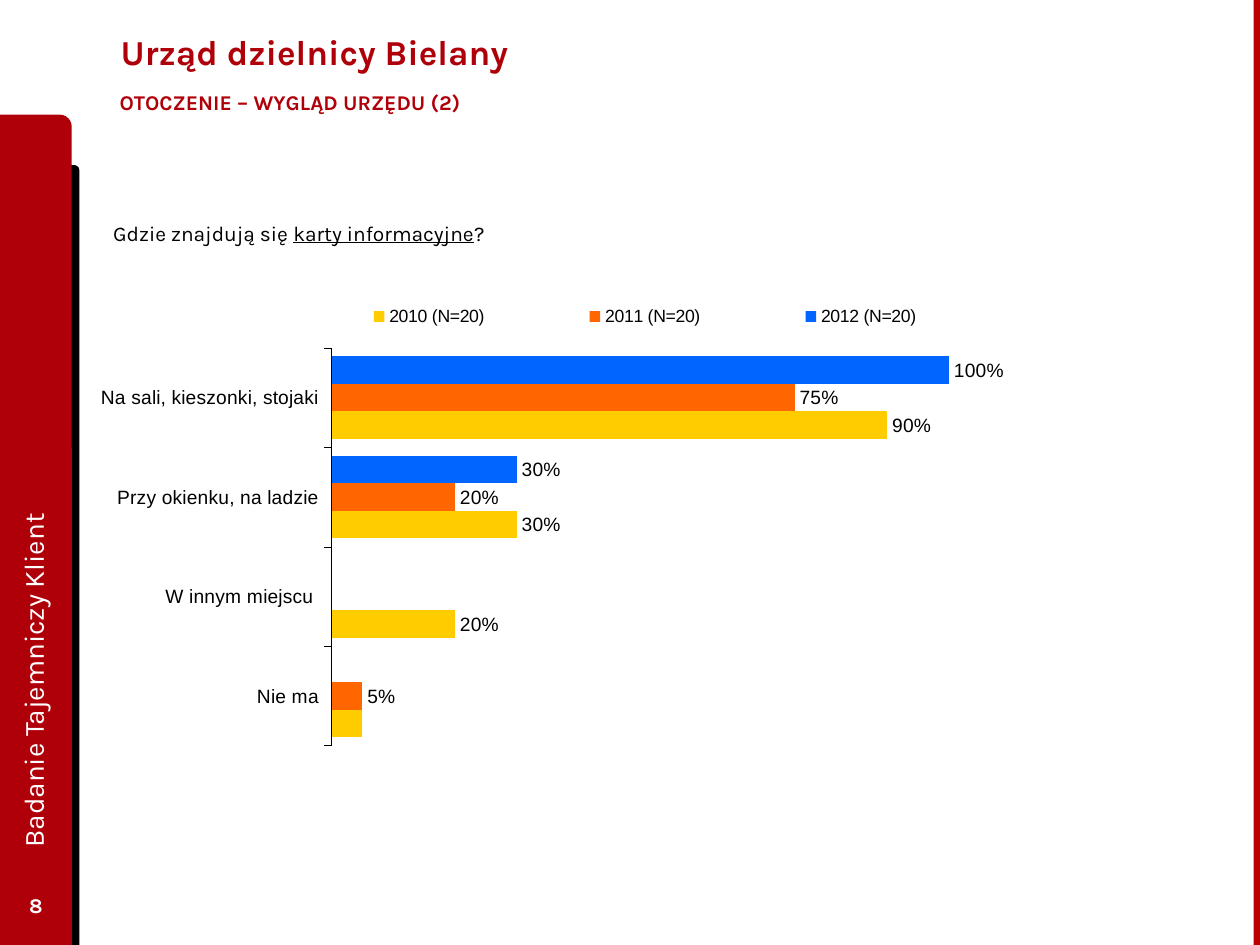
from dataclasses import dataclass

from lxml.etree import SubElement
from pptx import Presentation
from pptx.chart.data import CategoryChartData
from pptx.dml.color import RGBColor
from pptx.enum.chart import (XL_CHART_TYPE, XL_LABEL_POSITION,
                             XL_LEGEND_POSITION, XL_TICK_MARK)
from pptx.enum.shapes import MSO_SHAPE
from pptx.enum.text import MSO_ANCHOR, PP_ALIGN
from pptx.oxml import parse_xml
from pptx.oxml.ns import nsdecls, qn
from pptx.util import Inches, Pt

RED, BLACK, WHITE = "AF000A", "000000", "FFFFFF"


@dataclass
class Box:
    left: float
    top: float
    width: float
    height: float

    def place(self) -> tuple:
        return tuple(map(Inches, (self.left, self.top, self.width, self.height)))


@dataclass
class Panel:
    box: Box
    kind: MSO_SHAPE
    fill: str


@dataclass
class Label:
    box: Box
    runs: list[str]
    size: float
    color: str
    bold: bool = False
    align: PP_ALIGN = PP_ALIGN.LEFT
    anchor: MSO_ANCHOR = MSO_ANCHOR.TOP
    inset: float = 0.1
    wrap: bool = True
    turn: float = 0


@dataclass
class Series:
    name: str
    values: list
    color: str


PANELS = [
    Panel(Box(0.39, 1.31, 0.24, 6.19), MSO_SHAPE.ROUND_1_RECTANGLE, BLACK),
    Panel(Box(0, 0.91, 0.57, 6.59), MSO_SHAPE.ROUND_1_RECTANGLE, RED),
    Panel(Box(9.95, 0, 0.05, 7.5), MSO_SHAPE.RECTANGLE, "BD0000"),
]
MID = MSO_ANCHOR.MIDDLE
LABELS = [
    Label(Box(0.86, 0.05, 7.77, 0.72), ["Urząd dzielnicy Bielany"], 20, RED,
          bold=True, anchor=MID),
    Label(Box(0.75, 0.66, 3.85, 0.33), ["OTOCZENIE – WYGLĄD URZĘDU (2)"], 12, RED,
          bold=True, inset=0.2, wrap=False),
    # Every second run is underlined
    Label(Box(0.8, 1.7, 6.15, 0.3),
          ["Gdzie znajdują się ", "karty informacyjne", "?"], 12, BLACK),
    Label(Box(0, 6.98, 0.57, 0.4), ["8"], 12, WHITE,
          bold=True, align=PP_ALIGN.CENTER, anchor=MID),
    Label(Box(-2.62, 3.69, 5.76, 0.51), ["Badanie Tajemniczy Klient"], 16, WHITE,
          anchor=MID, turn=270),
]
GROUPS = ["Na sali, kieszonki, stojaki", "Przy okienku, na ladzie",
          "W innym miejscu ", "Nie ma"]
SERIES = [
    Series("2012 (N=20)", [1, 0.3, None, None], "0066FF"),
    Series("2011 (N=20)", [0.75, 0.2, None, 0.05], "FF6600"),
    Series("2010 (N=20)", [0.9, 0.3, 0.2, 0.05], "FFCC00"),
]


def paint(fmt, color: str) -> None:
    fmt.solid()
    fmt.fore_color.rgb = RGBColor.from_string(color)


def style(font, size: float, color: str, face: str, bold: bool = False) -> None:
    font.size, font.name, font.bold = Pt(size), face, bold
    font.color.rgb = RGBColor.from_string(color)


def add_panel(slide, item: Panel) -> None:
    shape = slide.shapes.add_shape(item.kind, *item.box.place())
    shape.shadow.inherit = False
    paint(shape.fill, item.fill)
    shape.line.fill.background()


def add_label(slide, item: Label) -> None:
    shape = slide.shapes.add_textbox(*item.box.place())
    shape.rotation = item.turn
    frame = shape.text_frame
    frame.word_wrap = item.wrap
    frame.vertical_anchor = item.anchor
    frame.margin_left = frame.margin_right = Inches(item.inset)
    para = frame.paragraphs[0]
    para.alignment = item.align
    style(para.font, item.size, item.color, "Karla", item.bold)
    for i, text in enumerate(item.runs):
        run = para.add_run()
        run.text = text
        if i % 2:
            run.font.underline = True


def layout(x: float, y: float, w: float, h: float, inner: bool = False):
    """Make a manual layout in fractions of the chart."""
    root = parse_xml(f"<c:layout {nsdecls('c')}><c:manualLayout/></c:layout>")
    parts = [("layoutTarget", "inner")] if inner else []
    parts += [("xMode", "edge"), ("yMode", "edge"),
              ("x", x), ("y", y), ("w", w), ("h", h)]
    for tag, val in parts:
        SubElement(root[0], qn(f"c:{tag}")).set("val", str(val))
    return root


def set_layout(node, new, after: str = "") -> None:
    """Swap in a layout, first in the node or after the named child."""
    old = node.find(qn("c:layout"))
    if old is not None:
        node.remove(old)
    if after:
        node.find(qn(after)).addnext(new)
    else:
        node.insert(0, new)


def hide_label(labels, point: int) -> None:
    labels._element.insert(0, parse_xml(
        f'<c:dLbl {nsdecls("c")}><c:idx val="{point}"/><c:delete val="1"/></c:dLbl>'))


def add_bars(slide, box: Box) -> None:
    data = CategoryChartData(number_format="0%")
    data.categories = GROUPS
    for item in SERIES:
        data.add_series(item.name, item.values)
    chart = slide.shapes.add_chart(
        XL_CHART_TYPE.BAR_CLUSTERED, *box.place(), data).chart
    chart.has_title = False
    style(chart.font, 11, BLACK, "Arial")

    # Axes
    cat, val = chart.category_axis, chart.value_axis
    cat.reverse_order = True
    cat.major_tick_mark = XL_TICK_MARK.OUTSIDE
    paint(cat.format.line.fill, BLACK)
    cat.format.line.width = Pt(0.23)
    style(cat.tick_labels.font, 11, BLACK, "Arial")
    val.minimum_scale, val.maximum_scale = 0, 1.2
    val.has_major_gridlines = False
    val.visible = False

    # Bars and their values
    plot = chart.plots[0]
    plot.gap_width, plot.overlap, plot.vary_by_categories = 60, 0, False
    for bars, item in zip(plot.series, SERIES):
        paint(bars.format.fill, item.color)
        labels = bars.data_labels
        labels.show_value = True
        labels.number_format, labels.number_format_is_linked = "0%", False
        labels.position = XL_LABEL_POSITION.OUTSIDE_END
        style(labels.font, 11, BLACK, "Arial")
    hide_label(plot.series[2].data_labels, 3)

    # Legend and plot area
    chart.has_legend = True
    key = chart.legend
    key.position, key.include_in_layout = XL_LEGEND_POSITION.TOP, False
    style(key.font, 10.1, BLACK, "Arial")
    set_layout(key._element, layout(0.15, 0.01, 0.65, 0.06), "c:legendPos")
    area = chart._chartSpace.chart.plotArea
    set_layout(area, layout(0.2, 0.11, 0.65, 0.89, True))


def main() -> None:
    deck = Presentation()
    deck.slide_width, deck.slide_height = Inches(10), Inches(7.5)
    slide = deck.slides.add_slide(deck.slide_layouts[6])
    for item in PANELS:
        add_panel(slide, item)
    add_bars(slide, Box(0.8, 2.37, 9.07, 3.55))
    for item in LABELS:
        add_label(slide, item)
    deck.save("out.pptx")


if __name__ == "__main__":
    main()
